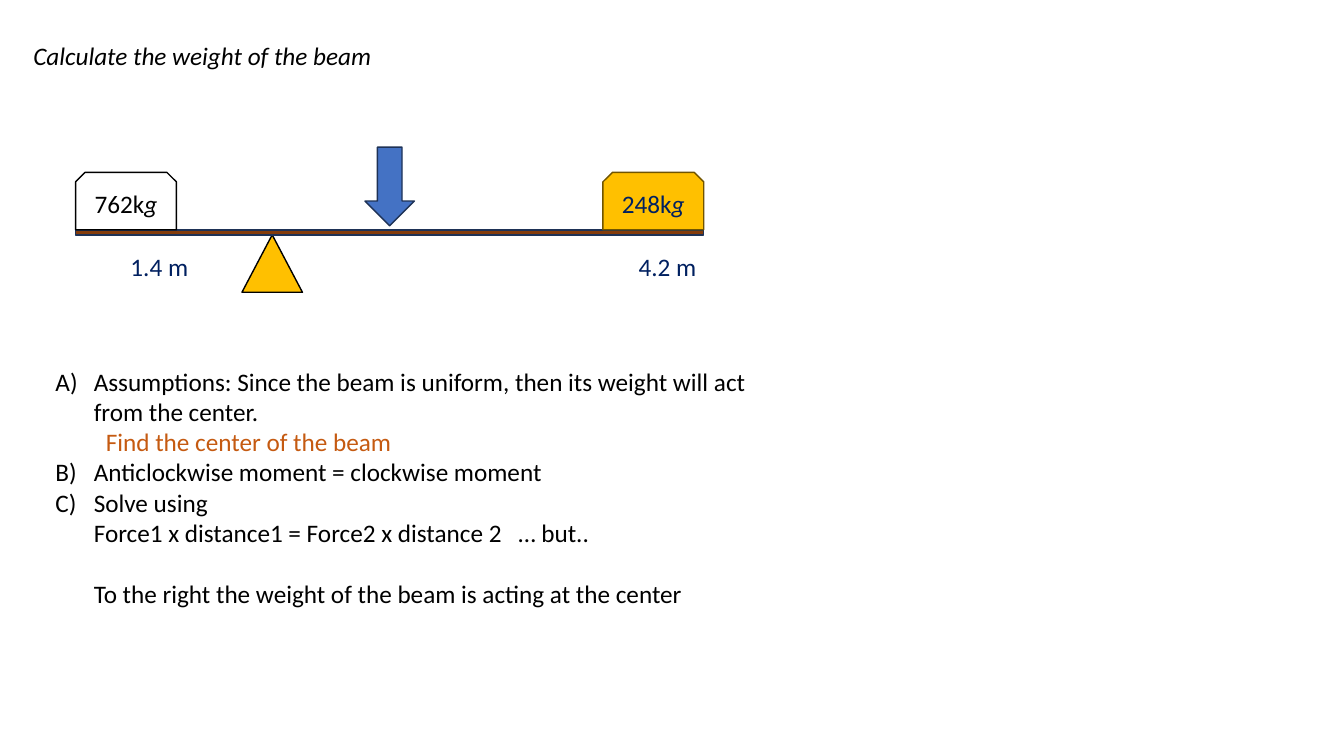
from lxml.etree import SubElement
from pptx import Presentation
from pptx.dml.color import RGBColor
from pptx.enum.shapes import MSO_SHAPE
from pptx.enum.text import MSO_ANCHOR, MSO_AUTO_SIZE, PP_ALIGN
from pptx.oxml.ns import qn
from pptx.util import Inches, Pt

BLACK, NAVY, WHITE, GOLD, ORANGE = "000000", "002060", "FFFFFF", "FFC000", "C55A11"


def format_run(run, color, italic=False):
    run.font.name = "Calibri"
    run.font.size = Pt(18)
    run.font.italic = italic
    run.font.color.rgb = RGBColor.from_string(color)


def add_outlined_shape(kind, left, top, width, height, fill, line):
    shape = slide.shapes.add_shape(
        kind, Inches(left), Inches(top), Inches(width), Inches(height))
    shape.shadow.inherit = False
    if fill:
        shape.fill.solid()
        shape.fill.fore_color.rgb = RGBColor.from_string(fill)
    else:
        shape.fill.background()
    shape.line.color.rgb = RGBColor.from_string(line)
    shape.line.width = Pt(1)
    return shape


presentation = Presentation()
presentation.slide_width = Inches(13.33)
presentation.slide_height = Inches(7.5)
slide = presentation.slides.add_slide(presentation.slide_layouts[1])

# Title and body placeholders
title, body = slide.shapes.title, slide.placeholders[1]
for placeholder, left, top, width, height in (
        (title, 0.23, 0.35, 9.03, 0.4), (body, 0.45, 3.58, 7.13, 2.52)):
    placeholder.left, placeholder.top = Inches(left), Inches(top)
    placeholder.width, placeholder.height = Inches(width), Inches(height)
    placeholder.text_frame.auto_size = MSO_AUTO_SIZE.NONE
    placeholder.text_frame.vertical_anchor = MSO_ANCHOR.TOP

title.text_frame.text = "Calculate the weight of the beam"
title_paragraph = title.text_frame.paragraphs[0]
title_paragraph.alignment = PP_ALIGN.LEFT
format_run(title_paragraph.runs[0], BLACK, italic=True)

# Solution steps: numbered or not, space before, lines with their colours
steps = [
    (True, 0, [("Assumptions: Since the beam is uniform, then its weight will act "
                "from the center.", BLACK),
               ("\tFind the center of the beam", ORANGE)]),
    (True, 0, [("Anticlockwise moment = clockwise moment", BLACK)]),
    (True, 0, [("Solve using", BLACK),
               ("Force1 x distance1 = Force2 x distance 2\t… but..", BLACK)]),
    (False, 22, [("To the right the weight of the beam is acting at the center", BLACK)]),
]
for index, (numbered, space_before, lines) in enumerate(steps):
    paragraph = body.text_frame.paragraphs[0] if index == 0 else body.text_frame.add_paragraph()
    paragraph.space_before = Pt(space_before)
    properties = paragraph._p.get_or_add_pPr()
    properties.set("marL", str(Inches(0.38)))
    properties.set("indent", str(Inches(-0.38 if numbered else 0)))
    if numbered:
        SubElement(properties, qn("a:buFont"), typeface="+mj-lt")
        SubElement(properties, qn("a:buAutoNum"), type="alphaUcParenR")
    else:
        SubElement(properties, qn("a:buNone"))
    if "\t…" in lines[-1][0]:
        tabs = SubElement(properties, qn("a:tabLst"))
        SubElement(tabs, qn("a:tab"), pos=str(Inches(4.59)), algn="l")
    for line_index, (text, color) in enumerate(lines):
        if line_index:
            paragraph.add_line_break()
        run = paragraph.add_run()
        run.text = text
        format_run(run, color)

# Pivot and beam
add_outlined_shape(MSO_SHAPE.ISOSCELES_TRIANGLE, 2.4, 2.33, 0.6, 0.57, GOLD, BLACK)
add_outlined_shape(MSO_SHAPE.RECTANGLE, 0.75, 2.28, 6.23, 0.05, "843C0B", "1E3256")

# Masses on the beam and distances below it
weight, plain = MSO_SHAPE.SNIP_2_SAME_RECTANGLE, MSO_SHAPE.RECTANGLE
labels = [
    (weight, 0.75, 1.71, 1, 0.57, WHITE, BLACK, ["762k", "g"], BLACK),
    (weight, 5.98, 1.71, 1, 0.57, GOLD, "705400", ["248k", "g"], NAVY),
    (plain, 0.94, 2.4, 1.28, 0.48, None, WHITE, ["1.4 m"], NAVY),
    (plain, 5.98, 2.4, 1.28, 0.48, None, WHITE, ["4.2 m"], NAVY),
]
for kind, left, top, width, height, fill, line, parts, color in labels:
    shape = add_outlined_shape(kind, left, top, width, height, fill, line)
    shape.text_frame.vertical_anchor = MSO_ANCHOR.MIDDLE
    paragraph = shape.text_frame.paragraphs[0]
    paragraph.alignment = PP_ALIGN.CENTER
    for part in parts:
        run = paragraph.add_run()
        run.text = part
        format_run(run, color, italic=part == "g")

# Weight of the beam
add_outlined_shape(MSO_SHAPE.DOWN_ARROW, 3.62, 1.46, 0.49, 0.78, "4472C4", "1E3256")

presentation.save("out.pptx")
